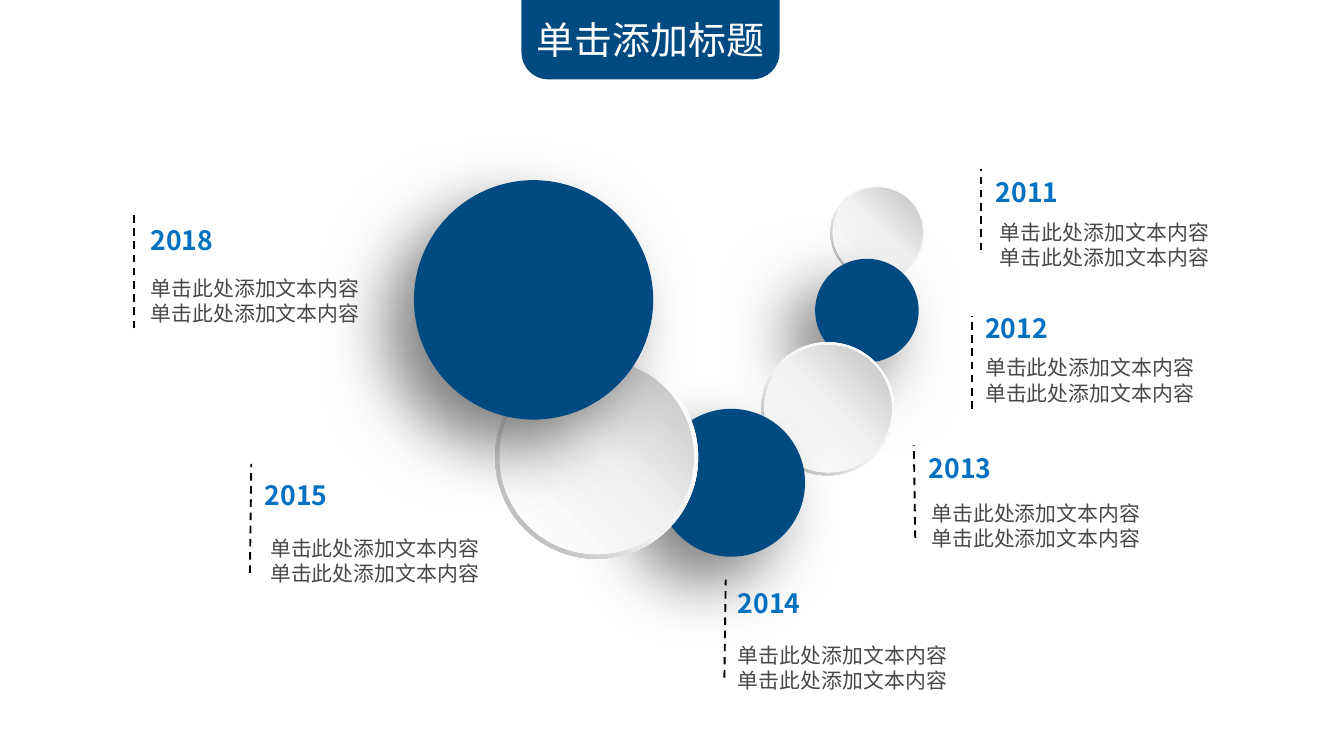
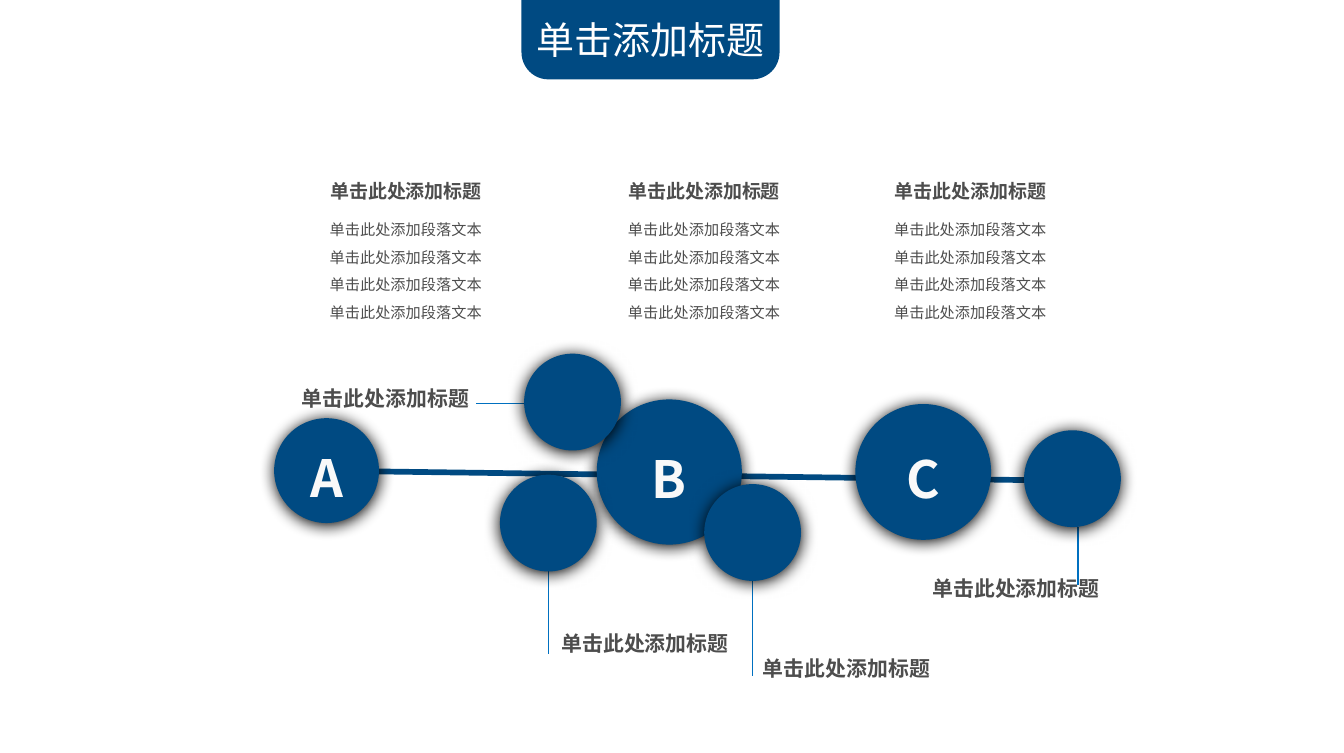
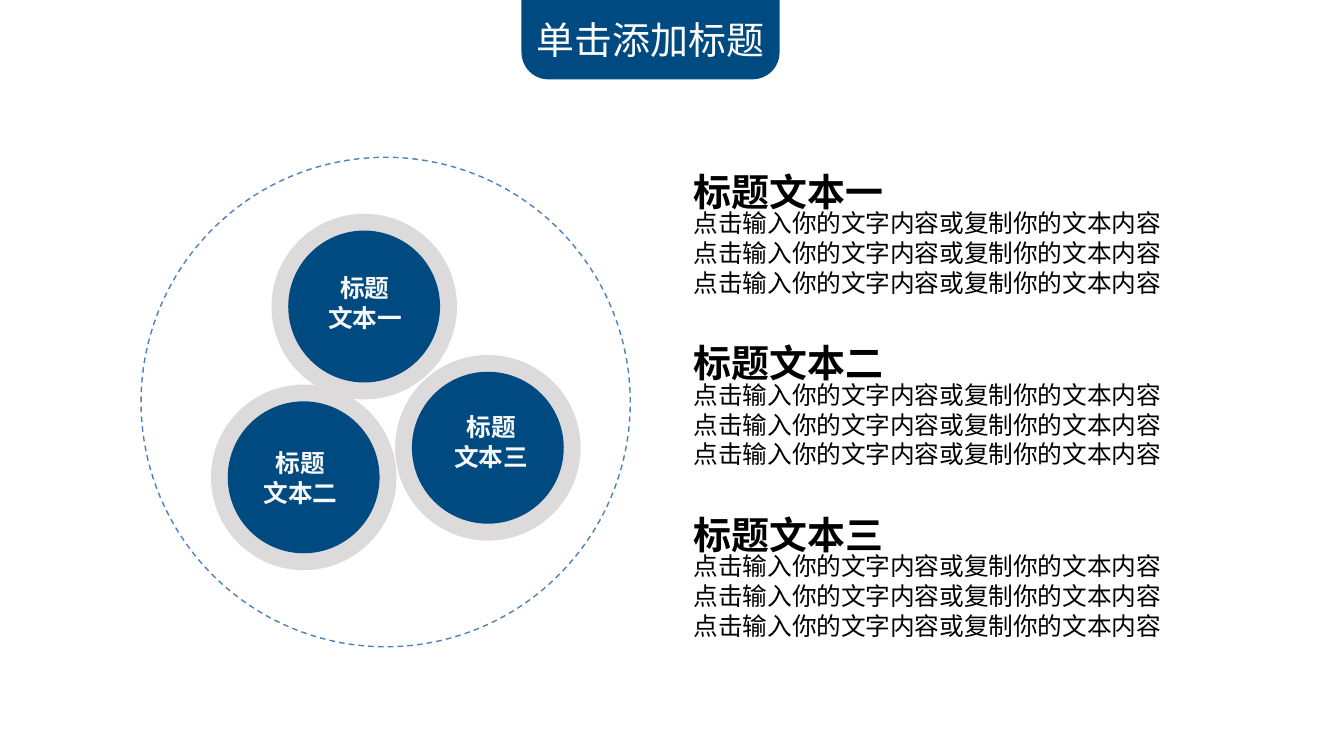
from dataclasses import dataclass

from lxml.etree import SubElement
from pptx import Presentation
from pptx.dml.color import RGBColor
from pptx.enum.dml import MSO_LINE
from pptx.enum.shapes import MSO_CONNECTOR, MSO_SHAPE
from pptx.enum.text import MSO_ANCHOR, MSO_AUTO_SIZE, PP_ALIGN
from pptx.oxml.ns import qn
from pptx.util import Inches, Pt


@dataclass(frozen=True)
class TextStyle:
    size: float
    color: str
    bold: bool = False
    centred: bool = False
    spacing: float = 1
    inset: tuple = (0.07, 0.04)


class Theme:
    font = "Noto Sans CJK SC"
    line_height = 1.21
    navy, sky, steel = "004A82", "0070C0", "4F81BD"
    black, silver = "000000", "DCDADA"
    rim = ((0, "FFFFFF"), (55, "F2F2F2"), (100, "A6A6A6"))
    pearl = ((0, "FFFFFF"), (51, "F2F2F2"), (100, "BFBFBF"))
    deep_shadow = (50, 35, 20, 135)
    soft_shadow = (100, 8.5, 1, 90)

    title = TextStyle(20, "FFFFFF")
    year = TextStyle(14, sky, bold=True, inset=(0.1, 0.05))
    note = TextStyle(11, "484848", inset=(0.1, 0.05))
    column_title = TextStyle(10, "4D4D4D", True, True, 1.2, (0.1, 0.05))
    column_text = TextStyle(8, "4D4D4D", False, True, 1.5, (0.1, 0.05))
    label = TextStyle(11, "4D4D4D", True, True, 1.2, (0.08, 0.04))
    letter = TextStyle(27, "F9F9F9", True, True, 1.2, (0.08, 0.04))
    heading = TextStyle(20, black, bold=True)
    paragraph = TextStyle(13, black)
    badge = TextStyle(13, "F8F8F8", True, True)


class Deck:
    COLUMNS, ROWS = 100, 56

    def __init__(self, theme):
        self.theme = theme
        self.prs = Presentation()
        self.prs.slide_width, self.prs.slide_height = Inches(9.84), Inches(5.51)
        self.column = self.prs.slide_width / self.COLUMNS
        self.row = self.prs.slide_height / self.ROWS
        self.slide = None
        self.bodies = []

    def cells(self, x, y, *size):
        units = (self.column, self.row) * 2
        return [round(value * unit) for value, unit in zip((x, y, *size), units)]

    def start(self, title, body_count=0):
        layout = "Comparison" if body_count else "Title Only"
        self.slide = self.prs.slides.add_slide(
            self.prs.slide_layouts.get_by_name(layout))
        heading, *bodies = self.slide.placeholders
        self.bodies = bodies[:body_count]
        for spare in bodies[body_count:]:
            spare.element.getparent().remove(spare.element)
        band = self.shape(MSO_SHAPE.ROUND_2_SAME_RECTANGLE,
                          (38.8, 0, 19.2, 5.9), self.theme.navy)
        band.adjustments[0], band.adjustments[1] = 0, 0.34
        band.element.addnext(heading.element)
        self.place(heading, (39.2, 0.8, 19.6, 4.2), [title], self.theme.title)

    def shape(self, preset, box, fill=None):
        shape = self.slide.shapes.add_shape(preset, *self.cells(*box))
        shape.shadow.inherit = False
        shape.line.fill.background()
        if fill:
            shape.fill.solid()
            shape.fill.fore_color.rgb = RGBColor.from_string(fill)
        else:
            shape.fill.background()
        return shape

    def circle(self, x, y, size, fill=None, shadow=None,
               preset=MSO_SHAPE.OVAL):
        box = (x - size / 2, y - size / 2, size, size)
        circle = self.shape(preset, box, fill)
        if shadow:
            self.cast(circle, *shadow)
        return circle

    def cast(self, shape, alpha, blur, distance, angle):
        effects = shape.element.spPr.find(qn("a:effectLst"))
        outer = SubElement(effects, qn("a:outerShdw"), {
            "blurRad": str(Pt(blur)), "dist": str(Pt(distance)),
            "dir": str(angle * 60000), "algn": "ctr", "rotWithShape": "0"})
        color = SubElement(outer, qn("a:srgbClr"), val=self.theme.black)
        SubElement(color, qn("a:alpha"), val=str(alpha * 1000))

    def shade(self, shape, stops, angle):
        empty = shape.element.spPr.find(qn("a:noFill"))
        gradient = SubElement(shape.element.spPr, qn("a:gradFill"), rotWithShape="1")
        stop_list = SubElement(gradient, qn("a:gsLst"))
        for share, color in stops:
            stop = SubElement(stop_list, qn("a:gs"), pos=str(share * 1000))
            SubElement(stop, qn("a:srgbClr"), val=color)
        SubElement(gradient, qn("a:lin"), ang=str(angle * 60000), scaled="0")
        empty.getparent().replace(empty, gradient)

    def pearl(self, x, y, size):
        rim = self.circle(x, y, size, preset=MSO_SHAPE.DONUT)
        rim.adjustments[0] = 0.049
        self.shade(rim, self.theme.rim, 135)
        self.shade(self.circle(x, y, size * 0.955), self.theme.pearl, 315)

    def line(self, start, end, color, width, dash=None):
        line = self.slide.shapes.add_connector(
            MSO_CONNECTOR.STRAIGHT, *self.cells(*start), *self.cells(*end))
        line.line.color.rgb = RGBColor.from_string(color)
        line.line.width = Pt(width)
        if dash:
            line.line.dash_style = dash
        SubElement(line.element.spPr, qn("a:effectLst"))

    def set_text(self, holder, lines, style, anchor=MSO_ANCHOR.TOP):
        frame = holder.text_frame
        frame.word_wrap = True
        frame.auto_size = MSO_AUTO_SIZE.NONE
        frame.vertical_anchor = anchor
        side, edge = map(Inches, style.inset)
        frame.margin_left = frame.margin_right = side
        frame.margin_top = frame.margin_bottom = edge
        for index, line in enumerate(lines):
            paragraph = frame.add_paragraph() if index else frame.paragraphs[0]
            paragraph.alignment = PP_ALIGN.CENTER if style.centred else PP_ALIGN.LEFT
            paragraph.line_spacing = Pt(
                style.size * style.spacing * self.theme.line_height)
            paragraph.space_before = paragraph.space_after = Pt(0)
            run = paragraph.add_run()
            run.text = line
            run.font.size = Pt(style.size)
            run.font.bold = style.bold
            run.font.name = self.theme.font
            run.font.color.rgb = RGBColor.from_string(style.color)
        for latin in list(holder.element.iter(qn("a:latin"))):
            east_asian = SubElement(latin.getparent(), qn("a:ea"),
                                    typeface=self.theme.font)
            latin.addnext(east_asian)

    def text(self, box, lines, style):
        holder = self.slide.shapes.add_textbox(*self.cells(*box))
        self.set_text(holder, lines, style)

    def place(self, holder, box, lines, style):
        holder.left, holder.top, holder.width, holder.height = self.cells(*box)
        self.set_text(holder, lines, style)
        for properties in holder.element.iter(qn("a:pPr")):
            properties.set("marL", "0")
            properties.set("indent", "0")
            SubElement(properties, qn("a:buNone"))

    def body(self, box, lines, style):
        self.place(self.bodies.pop(0), box, lines, style)


TITLE = "单击添加标题"


def build_years(deck):
    theme = deck.theme
    deck.start(TITLE)
    chain = [
        ((65.3, 17.3, 7), (64.5, 23.1, 7.7)),
        ((61.6, 30.4, 9.9), (54.4, 35.9, 11)),
        ((44.4, 34, 15.1), (39.7, 22.3, 17.8)),
    ]
    for pearl, bead in chain:
        deck.pearl(*pearl)
        deck.circle(*bead, theme.navy, theme.deep_shadow)

    years = [
        ("2011", (73.1, 12.6), (73.4, 15.8), (73, 18.6), (73, 12.6)),
        ("2012", (72.3, 22.7), (72.3, 25.9), (72.3, 30.4), (72.3, 23.5)),
        ("2013", (68.1, 33.1), (68.3, 36.7), (68.1, 40), (68, 33.1)),
        ("2014", (53.9, 43.1), (53.9, 47.3), (53.9, 50.4), (54, 43.1)),
        ("2015", (18.7, 35.1), (19.1, 39.3), (18.6, 42.6), (18.7, 34.5)),
        ("2018", (10.2, 16.1), (10.2, 20), (10, 24.4), (10, 15.8)),
    ]
    for year, year_at, note_at, foot, top in years:
        deck.line(foot, top, theme.black, 1, MSO_LINE.DASH)
        deck.text((*year_at, 7, 3.5), [year], theme.year)
        deck.text((*note_at, 17.8, 4.8), ["单击此处添加文本内容"] * 2, theme.note)


def build_stages(deck):
    theme = deck.theme
    deck.start(TITLE, body_count=3)
    branches = [
        ((39, 30), (35.4, 30), (21.5, 27.9)),
        ((80.2, 39.2), (80.2, 43.5), (68.4, 42)),
        ((40.8, 42.5), (40.8, 48.6), (40.8, 46.1)),
        ((56, 43.1), (56, 50.3), (55.8, 48)),
    ]
    for start, end, label_at in branches:
        deck.line(start, end, theme.sky, 0.75)
        deck.text((*label_at, 14.4, 3), ["单击此处添加标题"], theme.label)

    deck.line((28.15, 35.06), (76.2, 35.7), theme.navy, 3)
    stages = [("A", 24.3, 35, 7.8), ("B", 49.8, 35.1, 10.8), ("C", 68.7, 35.1, 10.1)]
    for letter, *spot in stages:
        stage = deck.circle(*spot, theme.navy, theme.soft_shadow)
        deck.set_text(stage, [letter], theme.letter, MSO_ANCHOR.MIDDLE)
    for x, y in ((79.8, 35.6), (42.6, 29.9), (40.8, 38.9), (56, 39.6)):
        deck.circle(x, y, 7.2, theme.navy, theme.soft_shadow)

    for centre in (30.2, 52.4, 72.2):
        left, width = centre - 6.9, 13.8
        deck.text((left, 12.5, width, 3), ["单击此处添加标题"], theme.column_title)
        deck.body((left, 15.2, width, 9.2), ["单击此处添加段落文本" * 4],
                  theme.column_text)


def build_topics(deck):
    theme = deck.theme
    deck.start(TITLE, body_count=3)
    orbit = deck.circle(28.7, 29.9, 36.4)
    orbit.line.color.rgb = RGBColor.from_string(theme.steel)
    orbit.line.width = Pt(0.75)
    orbit.line.dash_style = MSO_LINE.DASH

    badges = [
        ("文本二", (22.6, 35.5), (18.6, 32.9)),
        ("文本三", (36.3, 33.3), (32.8, 30.2)),
        ("文本一", (27.1, 22.8), (23.4, 19.9)),
    ]
    for topic, centre, label_at in badges:
        deck.circle(*centre, 13.8, theme.silver)
        deck.circle(*centre, 11.3, theme.navy)
        deck.text((*label_at, 7.5, 5.3), ["标题", topic], theme.badge)

    for index, numeral in enumerate("一二三"):
        top = 12.1 + 12.75 * index
        deck.text((50.9, top, 15.8, 4.2), ["标题文本" + numeral], theme.heading)
        deck.body((50.9, top + 2.95, 40.2, 7.5),
                  ["点击输入你的文字内容或复制你的文本内容"] * 3, theme.paragraph)


def main():
    deck = Deck(Theme())
    for build in (build_years, build_stages, build_topics):
        build(deck)
    deck.prs.save("out.pptx")


if __name__ == "__main__":
    main()
